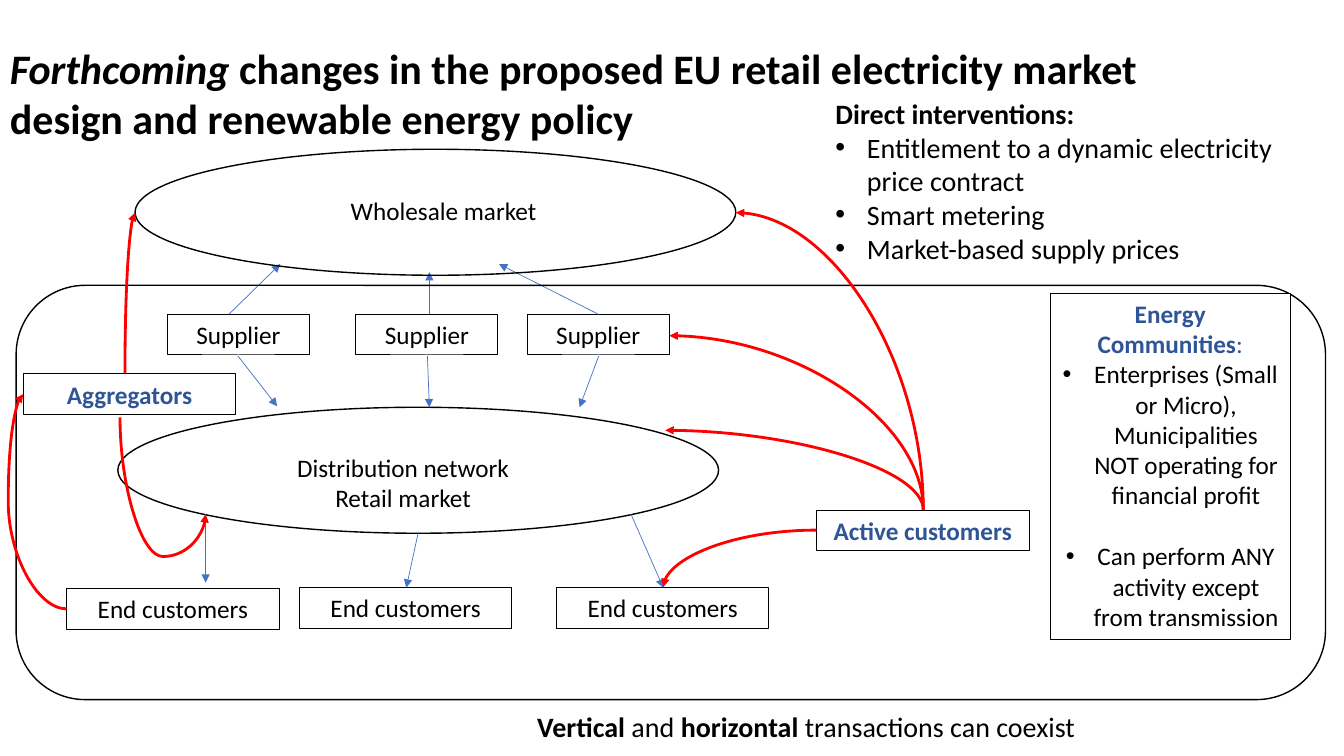
from dataclasses import dataclass
from math import cos, radians, sin

from lxml.etree import SubElement as Sub
from pptx import Presentation
from pptx.dml.color import RGBColor as RGB
from pptx.enum.shapes import MSO_CONNECTOR as Conn, MSO_SHAPE as Kind
from pptx.enum.text import PP_ALIGN as Align
from pptx.oxml.ns import qn
from pptx.util import Pt


@dataclass(frozen=True)
class Theme:
    """Colours, type sizes and line widths."""
    font: str = "Calibri"
    ink: RGB = RGB(0, 0, 0)
    paper: RGB = RGB(255, 255, 255)
    navy: RGB = RGB(0x2F, 0x55, 0x97)
    blue: RGB = RGB(0x44, 0x72, 0xC4)
    red: RGB = RGB(255, 0, 0)
    head: float = 30
    lead: float = 20
    body: float = 18
    thin: float = 0.5
    edge: float = 0.75
    rim: float = 1
    bold: float = 2


T = Theme()


@dataclass(frozen=True)
class Run:
    """A piece of text in one style."""
    text: str
    bold: bool = False
    slant: bool = False
    color: RGB = T.ink


@dataclass(frozen=True)
class Para:
    """A paragraph of runs."""
    runs: tuple[Run, ...]
    dot: bool = False
    gap: float = 0


@dataclass(frozen=True)
class Area:
    """A rectangle in points."""
    x: float
    y: float
    w: float
    h: float

    def spots(self) -> tuple[Pt, Pt, Pt, Pt]:
        """Return the position and size as lengths."""
        return Pt(self.x), Pt(self.y), Pt(self.w), Pt(self.h)


@dataclass(frozen=True)
class Arrow:
    """An arrow between two points, bent when it has a preset name."""
    x1: float
    y1: float
    x2: float
    y2: float
    bend: str = ""
    turn: int = 0
    adj: int = 0


def line(text: str, bold: bool = False, color: RGB = T.ink, dot: bool = False,
         gap: float = 0) -> Para:
    """Make a paragraph with a single run."""
    return Para((Run(text, bold, color=color),), dot, gap)


def write(shape, paras: tuple[Para, ...], size: float, align: Align) -> None:
    """Fill a shape with styled paragraphs."""
    frame = shape.text_frame
    frame.word_wrap = True
    frame.vertical_anchor = 1
    for i, para in enumerate(paras):
        p = frame.add_paragraph() if i else frame.paragraphs[0]
        p.alignment = align
        if para.gap:
            p.space_before = Pt(para.gap)
        if para.dot:
            props = p._p.get_or_add_pPr()
            props.set("marL", str(Pt(22.5)))
            props.set("indent", str(-Pt(22.5)))
            Sub(props, qn("a:buFont")).set("typeface", "Arial")
            Sub(props, qn("a:buChar")).set("char", "•")
        for part in para.runs:
            run = p.add_run()
            run.text = part.text
            font = run.font
            font.name, font.size = T.font, Pt(size)
            font.bold, font.italic = part.bold, part.slant
            font.color.rgb = part.color


def label(slide, area: Area, paras: tuple[Para, ...], size: float = T.body,
          align: Align = Align.CENTER) -> None:
    """Draw a text box."""
    write(slide.shapes.add_textbox(*area.spots()), paras, size, align)


def frame(slide, kind: Kind, area: Area, width: float = T.rim):
    """Draw an outlined shape without fill."""
    shape = slide.shapes.add_shape(kind, *area.spots())
    shape.shadow.inherit = False
    shape.fill.background()
    shape.line.color.rgb = T.ink
    shape.line.width = Pt(width)
    return shape


def box(slide, area: Area, *paras: Para) -> None:
    """Draw a white box with centred text."""
    shape = frame(slide, Kind.RECTANGLE, area, T.edge)
    shape.fill.solid()
    shape.fill.fore_color.rgb = T.paper
    write(shape, paras, T.body, Align.CENTER)


def link(slide, arrow: Arrow) -> None:
    """Draw a straight or bent arrow."""
    mx, my = (arrow.x1 + arrow.x2) / 2, (arrow.y1 + arrow.y2) / 2
    dx, dy = arrow.x1 - mx, arrow.y1 - my
    c, s = cos(radians(arrow.turn)), sin(radians(arrow.turn))
    ux, uy = dx * c + dy * s, dy * c - dx * s
    kind = Conn.CURVE if arrow.bend else Conn.STRAIGHT
    conn = slide.shapes.add_connector(
        kind, Pt(mx + ux), Pt(my + uy), Pt(mx - ux), Pt(my - uy))
    conn.line.color.rgb = T.red if arrow.bend else T.blue
    conn.line.width = Pt(T.bold if arrow.bend else T.thin)
    props = conn.element.spPr
    Sub(props.find(qn("a:ln")), qn("a:tailEnd")).set("type", "triangle")
    Sub(props, qn("a:effectLst"))
    if arrow.bend:
        props.find(qn("a:xfrm")).set("rot", str(arrow.turn * 60000))
        geom = props.find(qn("a:prstGeom"))
        geom.set("prst", arrow.bend)
        if arrow.adj:
            guide = Sub(geom.find(qn("a:avLst")), qn("a:gd"))
            guide.set("name", "adj1")
            guide.set("fmla", f"val {arrow.adj}")


ENDS = ((47.5, 420.5), (213.8, 419.8), (400.3 - 2.9, 419.8))
SELLERS = (119.5, 254.2, 376.6)
FLOWS = (
    Arrow(427.7, 224.6, 356.4, 188.6), Arrow(306.7, 224.6, 306.7, 194.4),
    Arrow(163.4, 224.6, 200.2, 188.6), Arrow(146.9, 367.2, 146.9, 416.2),
    Arrow(298.8, 380.2, 290.2, 419.8), Arrow(450.7, 367.2, 473.8, 419.8),
    Arrow(169.9, 254.2, 198, 290.2), Arrow(305.3, 254.2, 306.7, 290.9),
    Arrow(427.7, 254.2, 414, 290.9),
)
ARC, WAVE = "curvedConnector2", "curvedConnector3"
CURVES = (
    Arrow(659.5, 364.3, 475.2, 307.4, ARC, 270),
    Arrow(659.5, 364.3, 525.6, 151.9, ARC, 270),
    Arrow(583.2, 378.7, 473.8, 419.4, ARC, 180),
    Arrow(659.5, 364.3, 478.1, 239.8, ARC, 270),
    Arrow(47.5, 434.9, 16.6, 281.5, WAVE, 180, 134800),
    Arrow(89.3, 266.4, 96.5, 151.9, ARC, 90),
    Arrow(85.7, 298.1, 146.9, 367.2, WAVE, 270, 143900),
)


def main() -> None:
    """Build the slide and save it."""
    deck = Presentation()
    deck.slide_width, deck.slide_height = Pt(960), Pt(540)
    slide = deck.slides.add_slide(deck.slide_layouts[6])
    title = Para((
        Run("Forthcoming ", True, True),
        Run("changes in the proposed EU retail electricity market design "
            "and renewable energy policy", True)))
    label(slide, Area(0, 26.6, 829.4, 101.5), (title,), T.head, Align.LEFT)
    frame(slide, Kind.OVAL, Area(84.2, 290.9, 429.1, 90))
    for x, y in ENDS:
        box(slide, Area(x, y, 151.9, 29), line("End customers"))
    for x in SELLERS:
        box(slide, Area(x, 224.6, 101.5, 29), line("Supplier"))
    label(slide, Area(177.8, 319.7, 220.3, 51.1),
          (line("Distribution network"), line("Retail market")))
    for flow in FLOWS:
        link(slide, flow)
    frame(slide, Kind.OVAL, Area(96.5, 106.6, 429.1, 90))
    label(slide, Area(167.8, 136.1, 298.1, 29), (line("Wholesale market"),))
    frame(slide, Kind.ROUNDED_RECTANGLE, Area(11.5, 203.8, 935.3, 295.9))
    box(slide, Area(583.2, 364.3, 151.9, 29),
        line("Active customers", True, T.navy))
    box(slide, Area(750.2, 209.5, 171.4, 247),
        Para((Run("Energy Communities", True, color=T.navy),
              Run(":", color=T.navy))),
        line("Enterprises (Small or Micro), Municipalities NOT operating "
             "for financial profit", dot=True),
        line("Can perform ANY activity except from transmission",
             dot=True, gap=22))
    box(slide, Area(16.6, 267.1, 151.9, 29),
        line("Aggregators", True, T.navy))
    for curve in CURVES:
        link(slide, curve)
    closing = Para((Run("Vertical", True), Run(" and "),
                    Run("horizontal ", True),
                    Run("transactions can coexist")))
    label(slide, Area(376.6, 503.3, 524.9, 31.7), (closing,), T.lead,
          Align.LEFT)
    label(slide, Area(589.7, 65.5, 359.3, 128.2), (
        line("Direct interventions:", True),
        line("Entitlement to a dynamic electricity price contract", dot=True),
        line("Smart metering", dot=True),
        line("Market-based supply prices", dot=True)), T.lead, Align.LEFT)
    deck.save("out.pptx")


if __name__ == "__main__":
    main()
